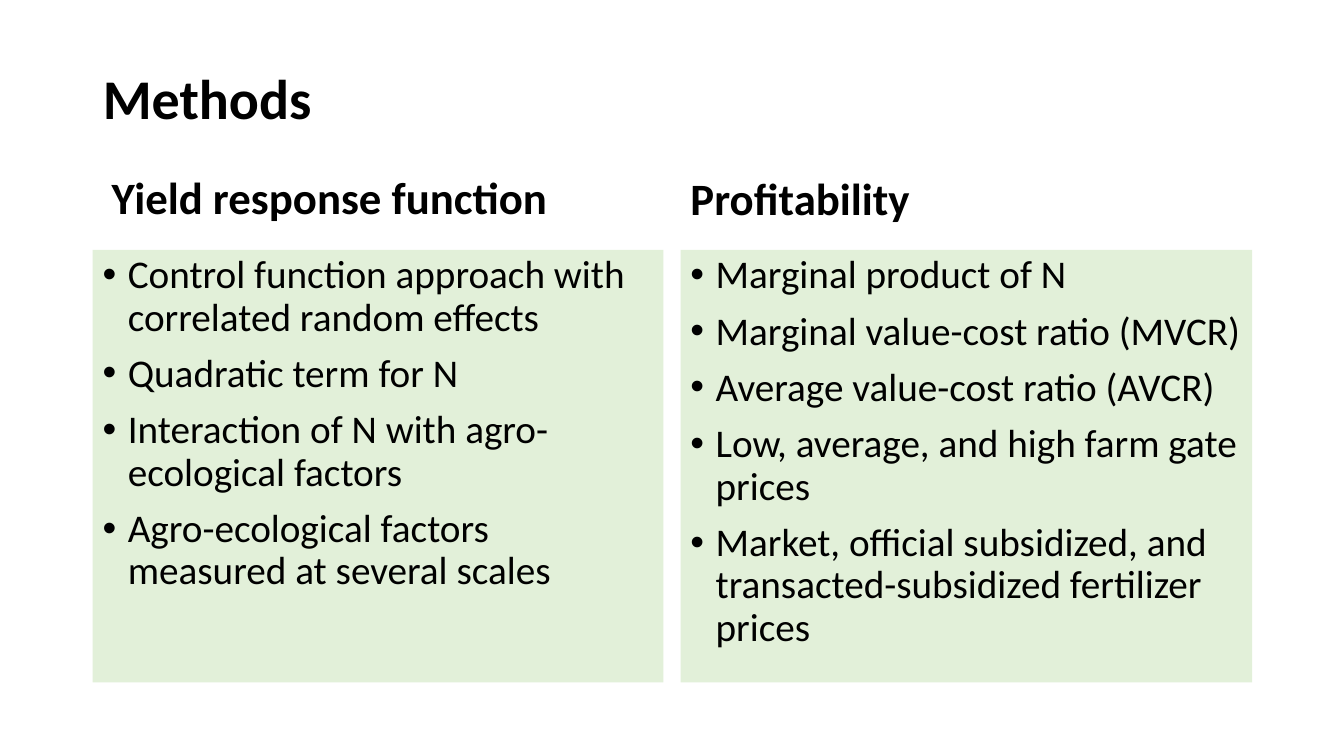
import pptx
import pptx.dml.color
import pptx.enum.shapes
import pptx.enum.text
import pptx.oxml.ns
import pptx.util
from lxml import etree

Inches = pptx.util.Inches
ANCHOR = pptx.enum.text.MSO_ANCHOR

COLUMNS = [
    ("Yield response function", (1.01, 1.27, 5.64, 1), (0.92, 2.48, 5.66, 4.29), [
        "Control function approach with correlated random effects",
        "Quadratic term for N",
        "Interaction of N with agro-ecological factors",
        "Agro-ecological factors measured at several scales",
    ]),
    ("Profitability", (6.75, 1.61, 5.67, 0.67), (6.75, 2.48, 5.67, 4.29), [
        "Marginal product of N",
        "Marginal value-cost ratio (MVCR)",
        "Average value-cost ratio (AVCR)",
        "Low, average, and high farm gate prices",
        "Market, official subsidized, and transacted-subsidized fertilizer prices",
    ]),
]


def color(hex_string):
    return pptx.dml.color.RGBColor.from_string(hex_string)


def add_bullet(p, indent=0.25):
    pPr = p._p.get_or_add_pPr()
    pPr.set("marL", str(Inches(indent)))
    pPr.set("indent", str(-Inches(indent)))
    qn = pptx.oxml.ns.qn
    etree.SubElement(pPr, qn("a:buFont")).set("typeface", "Arial")
    etree.SubElement(pPr, qn("a:buChar")).set("char", "•")


def write(tf, lines, size=28, bold=False, anchor=ANCHOR.TOP, before=10, bullets=False):
    """Fill a text frame with one paragraph per line."""
    tf.word_wrap = True
    tf.auto_size = pptx.enum.text.MSO_AUTO_SIZE.NONE
    tf.vertical_anchor = anchor
    for i, line in enumerate(lines):
        p = tf.add_paragraph() if i else tf.paragraphs[0]
        p.alignment = pptx.enum.text.PP_ALIGN.LEFT
        p.line_spacing = 0.9
        p.space_before = pptx.util.Pt(before)
        if bullets:
            add_bullet(p)
        r = p.add_run()
        r.text = line
        r.font.name = "Calibri"
        r.font.size = pptx.util.Pt(size)
        r.font.bold = bold
        r.font.color.rgb = color(SlideBuilder.TEXT)


class SlideBuilder:
    TEXT = "000000"
    PANEL = "E2F0D9"

    def __init__(self, s):
        self.s = s

    def title(self, text, box):
        sp = self.s.shapes.title
        sp.left, sp.top, sp.width, sp.height = map(Inches, box)
        write(sp.text_frame, [text], size=40, bold=True, anchor=ANCHOR.MIDDLE, before=0)

    def heading(self, text, box):
        sp = self.s.shapes.add_textbox(*map(Inches, box))
        write(sp.text_frame, [text], size=32, bold=True, anchor=ANCHOR.BOTTOM)

    def panel(self, lines, box):
        rectangle = pptx.enum.shapes.MSO_SHAPE.RECTANGLE
        sp = self.s.shapes.add_shape(rectangle, *map(Inches, box))
        sp.shadow.inherit = False
        sp.fill.solid()
        sp.fill.fore_color.rgb = color(self.PANEL)
        sp.line.fill.background()
        write(sp.text_frame, lines, bullets=True)


def main():
    prs = pptx.Presentation()
    prs.slide_width, prs.slide_height = Inches(13.33), Inches(7.5)
    builder = SlideBuilder(prs.slides.add_slide(prs.slide_layouts[5]))
    builder.title("Methods", (0.92, 0.4, 11.5, 1.21))
    for heading, heading_box, lines, panel_box in (
        (h, hb, items, pb) for h, hb, pb, items in COLUMNS
    ):
        builder.heading(heading, heading_box)
        builder.panel(lines, panel_box)
    prs.save("out.pptx")


if __name__ == "__main__":
    main()
